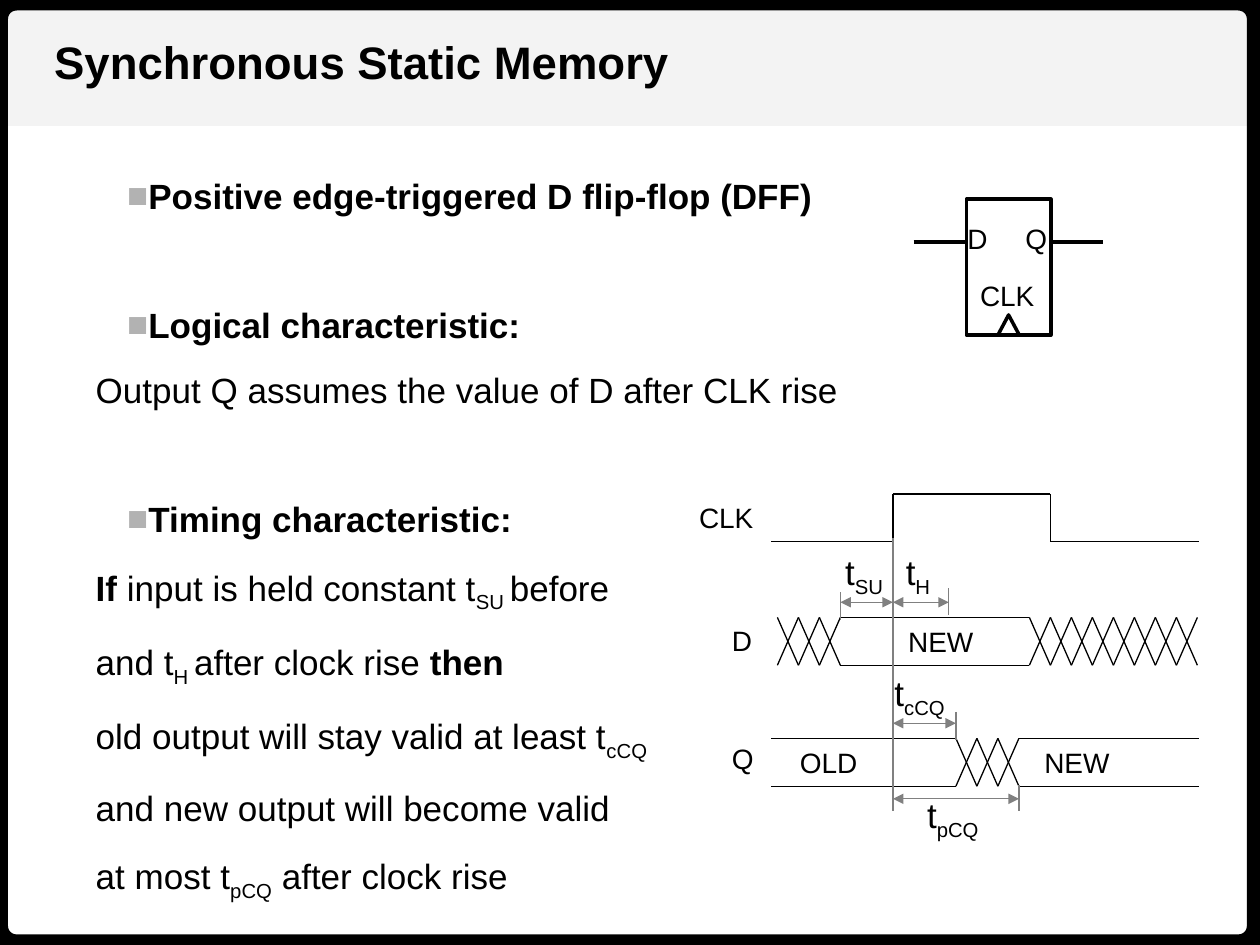
from dataclasses import dataclass

from lxml import etree
from pptx import Presentation
from pptx.dml.color import RGBColor
from pptx.enum.shapes import MSO_CONNECTOR, MSO_SHAPE
from pptx.enum.text import MSO_ANCHOR, MSO_AUTO_SIZE, PP_ALIGN
from pptx.oxml.ns import qn
from pptx.util import Inches, Pt

LINE = MSO_CONNECTOR.STRAIGHT
RECT = MSO_SHAPE.RECTANGLE
ROUND = MSO_SHAPE.ROUNDED_RECTANGLE
WEDGE = MSO_SHAPE.ISOSCELES_TRIANGLE
LEFT = PP_ALIGN.LEFT
TOP = MSO_ANCHOR.TOP
FIXED = MSO_AUTO_SIZE.NONE


@dataclass
class Theme:
    font: str = "Arial"
    ink: str = "000000"
    band: str = "F3F3F3"
    mark: str = "B2B2B2"
    gray: str = "808080"
    title: float = 26
    body: float = 20
    label: float = 16
    thin: float = 0.75
    thick: float = 2
    edge: float = 12


THEME = Theme()

POINTS = [
    ("head", 0, [("Positive edge-triggered D flip-flop (DFF)", "b")]),
    ("head", 1, [("Logical characteristic:", "b")]),
    ("text", 0, [("Output Q assumes the value of D after CLK rise", "")]),
    ("head", 1, [("Timing characteristic:", "b")]),
    ("text", 0, [("If", "b"), (" input is held constant t", ""), ("SU ", "sub"), ("before", "")]),
    ("text", 0, [("and t", ""), ("H ", "sub"), ("after clock rise ", ""), ("then", "b")]),
    ("text", 0, [("old output will stay valid at least t", ""), ("cCQ", "sub")]),
    ("text", 0, [("and new output will become valid", "")]),
    ("text", 0, [("at most t", ""), ("pCQ", "sub"), (" after clock rise", "")]),
]


def color(code):
    return RGBColor.from_string(code)


def place(shape, box):
    for name, value in zip(("left", "top", "width", "height"), box):
        setattr(shape, name, Inches(value))


def write(para, runs, size):
    for text, kind in runs:
        run = para.add_run()
        run.text = text
        style = {"name": THEME.font, "size": Pt(size), "bold": kind == "b"}
        for name, value in style.items():
            setattr(run.font, name, value)
        run.font.color.rgb = color(THEME.ink)
        if kind == "sub":
            run.font._element.set("baseline", "-25000")


def setup(frame, wrap):
    style = {"word_wrap": wrap, "auto_size": FIXED, "vertical_anchor": TOP}
    for name, value in style.items():
        setattr(frame, name, value)


def label(slide, box, text, sub=""):
    frame = slide.shapes.add_textbox(*map(Inches, box)).text_frame
    setup(frame, False)
    runs = [(text, "")] + ([(sub, "sub")] if sub else [])
    write(frame.paragraphs[0], runs, THEME.body if sub else THEME.label)


def stroke(slide, x1, y1, x2, y2, tint=THEME.ink, width=THEME.thin, arrow=False):
    line = slide.shapes.add_connector(LINE, *map(Inches, (x1, y1, x2, y2)))
    line.line.color.rgb = color(tint)
    line.line.width = Pt(width)
    if arrow:
        pen = line.line._get_or_add_ln()
        for end in ("a:headEnd", "a:tailEnd"):
            etree.SubElement(pen, qn(end), type="triangle")
    etree.SubElement(line._element.spPr, qn("a:effectLst"))


def block(slide, kind, box, fill=None, width=0):
    shape = slide.shapes.add_shape(kind, *map(Inches, box))
    shape.shadow.inherit = False
    if fill:
        shape.fill.solid()
        shape.fill.fore_color.rgb = color(fill)
    else:
        shape.fill.background()
    if width:
        shape.line.color.rgb = color(THEME.ink)
        shape.line.width = Pt(width)
    else:
        shape.line.fill.background()
    return shape


def frame_page(slide, box):
    x, y, w, h = box
    band = block(slide, RECT, (x, y, w, 1), THEME.band)
    edge = block(slide, ROUND, (x - 0.02, y, w, h), width=THEME.edge)
    edge.adjustments[0] = 0.02
    tree = band._element.getparent()
    for spot, shape in enumerate((band, edge), 2):
        tree.insert(spot, shape._element)


def add_title(slide, box):
    title = slide.shapes.title
    place(title, box)
    setup(title.text_frame, False)
    para = title.text_frame.paragraphs[0]
    para.alignment = LEFT
    write(para, [("Synchronous Static Memory", "b")], THEME.title)


def add_points(slide, box):
    body = slide.placeholders[1]
    place(body, box)
    frame = body.text_frame
    setup(frame, True)
    for index, (kind, gap, runs) in enumerate(POINTS):
        para = frame.add_paragraph() if index else frame.paragraphs[0]
        style = {"alignment": LEFT, "line_spacing": 1.5, "space_before": Pt(1.5 + 36 * gap)}
        for name, value in style.items():
            setattr(para, name, value)
        props = para._p.get_or_add_pPr()
        head = kind == "head"
        props.set("marL", str(Inches(0.63 if head else 0.38)))
        props.set("indent", "0")
        if head:
            tint = etree.SubElement(props, qn("a:buClr"))
            etree.SubElement(tint, qn("a:srgbClr"), val=THEME.mark)
            etree.SubElement(props, qn("a:buFont"), typeface=THEME.font)
            etree.SubElement(props, qn("a:buChar"), char="■")
        else:
            etree.SubElement(props, qn("a:buNone"))
        write(para, runs, THEME.body)


def add_latch(slide, box):
    x, y, w, h = box
    block(slide, RECT, (x + 0.42, y, w - 0.83, h), width=THEME.thick)
    block(slide, WEDGE, (x + 0.67, y + h - 0.16, 0.17, 0.16), width=THEME.thick)
    for left, right in ((x, x + 0.42), (x + w - 0.42, x + w)):
        stroke(slide, left, y + 0.34, right, y + 0.34, width=THEME.thick)
    for text, dx, dy, wide in (("D", 0.33, 0.13, 0.36), ("Q", 0.79, 0.13, 0.38), ("CLK", 0.43, 0.58, 0.64)):
        label(slide, (x + dx, y + dy, wide, 0.37), text)


def add_timing(slide, box):
    x, y, w, h = box
    high = 0.38
    start, end = x + 0.67, x + w
    data, out = y + 0.98, y + 1.94

    def col(step):
        return x + 0.72 + step / 6

    def rails(left, right, top):
        for level in (top, top + high):
            stroke(slide, left, level, right, level)

    def cross(first, last, top):
        for step in range(last - first):
            left, right = col(first + step), col(first + step + 1)
            stroke(slide, left, top, right, top + high)
            stroke(slide, left, top + high, right, top)

    rise, fall = col(5.5), col(13)
    low = y + high
    wave = [(start, low), (rise, low), (rise, y), (fall, y), (fall, low), (end, low)]
    for here, there in zip(wave, wave[1:]):
        stroke(slide, *here, *there)

    rails(col(3), col(12), data)
    cross(0, 3, data)
    cross(12, 20, data)
    rails(start, col(8.5), out)
    rails(col(11.5), end, out)
    for step in range(3):
        left, right = col(8.5 + step), col(9.5 + step)
        stroke(slide, left, out, right, out + high)
        stroke(slide, left, out + high, right, out)

    hold = x + 2.08
    for at, top, base in ((rise, 0.35, h), (col(3), 0.78, 1), (hold, 0.75, 0.96),
                          (col(8.5), 1.73, 1.95), (col(11.5), 2.31, h)):
        stroke(slide, at, y + top, at, y + base, THEME.gray)
    for left, right, dy in ((col(3), rise, 0.86), (rise, hold, 0.86),
                            (rise, col(8.5), 1.82), (rise, col(11.5), 2.42)):
        stroke(slide, left, y + dy, right, y + dy, THEME.gray, arrow=True)

    for text, dx, dy, wide in (("CLK", 0, 0, 0.64), ("D", 0.26, 0.98, 0.38), ("Q", 0.26, 1.92, 0.38),
                               ("NEW", 1.66, 0.99, 0.72), ("OLD", 0.8, 1.95, 0.66), ("NEW", 2.74, 1.95, 0.72)):
        label(slide, (x + dx, y + dy, wide, 0.37), text)
    for sub, dx, dy, wide in (("SU", 1.16, 0.4, 0.54), ("H", 1.64, 0.4, 0.41),
                              ("cCQ", 1.55, 1.36, 0.65), ("pCQ", 1.81, 2.33, 0.66)):
        label(slide, (x + dx, y + dy, wide, 0.44), "t", sub)


def main():
    deck = Presentation()
    deck.slide_width, deck.slide_height = Inches(10), Inches(7.5)
    slide = deck.slides.add_slide(deck.slide_layouts[1])
    frame_page(slide, (0, 0, 10, 7.5))
    add_title(slide, (0.33, 0.22, 5.13, 0.54))
    add_points(slide, (0.28, 1.17, 9.39, 6.16))
    add_latch(slide, (7.25, 1.58, 1.5, 1.08))
    add_timing(slide, (5.45, 3.92, 4.07, 2.52))
    deck.save("out.pptx")


if __name__ == "__main__":
    main()
